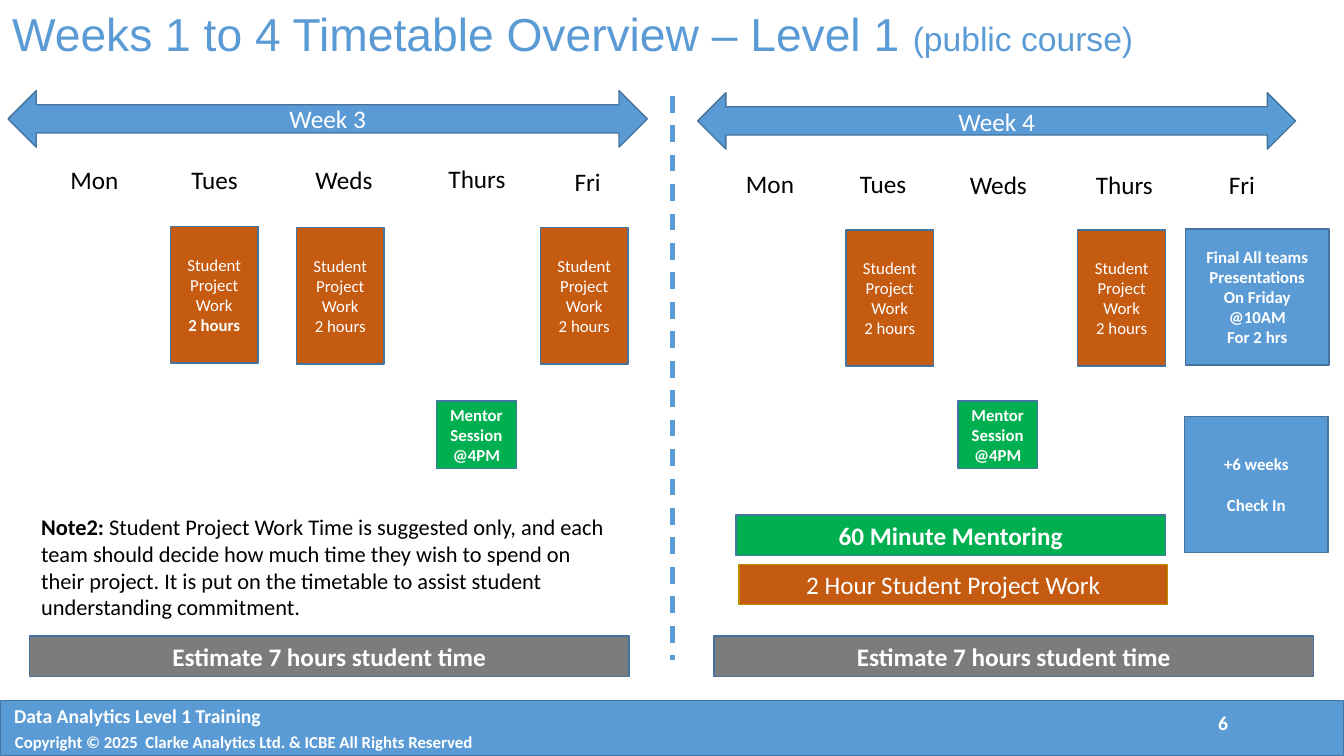
from dataclasses import dataclass

from lxml.etree import SubElement
from pptx import Presentation
from pptx.dml.color import RGBColor
from pptx.enum.dml import MSO_LINE
from pptx.enum.shapes import MSO_CONNECTOR, MSO_SHAPE
from pptx.enum.text import MSO_ANCHOR, MSO_AUTO_SIZE, PP_ALIGN
from pptx.oxml.ns import qn
from pptx.shapes.base import BaseShape
from pptx.slide import Slide
from pptx.text.text import Font, TextFrame
from pptx.util import Emu, Pt

SCALE = 9144
BLUE, EDGE, GOLD = "5B9BD5", "43739E", "BD8E00"
RUST, GREEN, GRAY = "C55A11", "00B050", "7C7C7C"
WHITE, BLACK = "FFFFFF", "000000"
DAYS = ("Mon", "Tues", "Weds", "Thurs", "Fri")
WIDTHS = (68, 67, 77, 77, 46)


@dataclass(frozen=True)
class Block:
    x: int
    y: int
    w: int
    h: int
    text: str = ""
    fill: str = BLUE
    size: int = 12
    bold: bool = False
    edge: str = EDGE
    form: MSO_SHAPE = MSO_SHAPE.RECTANGLE


@dataclass(frozen=True)
class Label:
    x: int
    y: int
    w: int
    h: int
    text: str
    size: int = 18
    color: str = BLACK
    bold: bool = False
    wrap: bool = False
    align: PP_ALIGN = PP_ALIGN.LEFT


def px(value: int) -> Emu:
    return Emu(value * SCALE)


def rgb(code: str) -> RGBColor:
    return RGBColor.from_string(code)


def style(font: Font, size: int, color: str, bold: bool = False, face: str = "Calibri") -> None:
    font.name, font.size, font.bold = face, Pt(size), bold
    font.color.rgb = rgb(color)


def write(frame: TextFrame, text: str, size: int, color: str, bold: bool, align: PP_ALIGN) -> None:
    frame.text = text
    for para in frame.paragraphs:
        para.alignment = align
        for run in para.runs:
            style(run.font, size, color, bold)


def add_block(slide: Slide, item: Block) -> BaseShape:
    shape = slide.shapes.add_shape(item.form, px(item.x), px(item.y), px(item.w), px(item.h))
    shape.shadow.inherit = False
    shape.fill.solid()
    shape.fill.fore_color.rgb = rgb(item.fill)
    shape.line.color.rgb = rgb(item.edge)
    shape.line.width = Pt(1)
    if item.text:
        frame = shape.text_frame
        frame.word_wrap = True
        frame.vertical_anchor = MSO_ANCHOR.MIDDLE
        write(frame, item.text, item.size, WHITE, item.bold, PP_ALIGN.CENTER)
    return shape


def add_label(slide: Slide, item: Label) -> BaseShape:
    box = slide.shapes.add_textbox(px(item.x), px(item.y), px(item.w), px(item.h))
    frame = box.text_frame
    frame.word_wrap = item.wrap
    frame.auto_size = MSO_AUTO_SIZE.SHAPE_TO_FIT_TEXT
    write(frame, item.text, item.size, item.color, item.bold, item.align)
    return box


def add_title(slide: Slide) -> None:
    title = slide.shapes.title
    title.left, title.top, title.width, title.height = px(12), px(2), px(1170), px(69)
    frame = title.text_frame
    frame.margin_left = frame.margin_right = frame.margin_top = frame.margin_bottom = 0
    frame.vertical_anchor = MSO_ANCHOR.MIDDLE
    frame.auto_size = MSO_AUTO_SIZE.NONE
    frame.word_wrap = True
    para = frame.paragraphs[0]
    para.text = "Weeks 1 to 4 Timetable Overview – Level 1 "
    para.alignment = PP_ALIGN.LEFT
    para.line_spacing = 0.9
    style(para.runs[0].font, 33, BLUE, face="Arial")
    tail = para.add_run()
    tail.text = "(public course)"
    style(tail.font, 24, BLUE, face="Arial")


def add_split(slide: Slide) -> None:
    line = slide.shapes.add_connector(MSO_CONNECTOR.STRAIGHT, px(667), px(95), px(667), px(655))
    line.line.color.rgb = rgb(BLUE)
    line.line.width = Pt(3)
    line.line.dash_style = MSO_LINE.DASH
    SubElement(line._element.spPr, qn("a:effectLst"))


def add_days(slide: Slide, spots: tuple[tuple[int, int], ...]) -> None:
    for day, width, (x, y) in zip(DAYS, WIDTHS, spots):
        add_label(slide, Label(x, y, width, 40, day))


def work(x: int, y: int) -> Block:
    return Block(x, y, 87, 135, "Student Project Work\n2 hours", RUST)


def mentor(x: int) -> Block:
    return Block(x, 398, 79, 67, "Mentor Session\n@4PM", GREEN, bold=True)


def total(x: int) -> Block:
    return Block(x, 631, 595, 40, "Estimate 7 hours student time", GRAY, 18, True)


def week(x: int, y: int, w: int, text: str) -> Block:
    return Block(x, y, w, 56, text, size=18, form=MSO_SHAPE.LEFT_RIGHT_ARROW)


def main() -> None:
    deck = Presentation()
    deck.slide_width, deck.slide_height = px(1333), px(750)
    slide = deck.slides.add_slide(deck.slide_layouts[5])
    add_title(slide)
    add_split(slide)
    add_days(slide, ((60, 158), (180, 158), (303, 158), (435, 157), (560, 160)))
    add_days(slide, ((730, 162), (843, 162), (952, 163), (1077, 163), (1209, 163)))

    blocks = (
        Block(0, 695, 1333, 55),
        week(8, 90, 634, "Week 3"),
        week(692, 92, 593, "Week 4"),
        total(29),
        total(708),
        work(294, 226),
        work(536, 226),
        work(839, 228),
        work(1069, 228),
        mentor(433),
        mentor(950),
        Block(1176, 227, 142, 135,
              "Final All teams Presentations\nOn Friday\n@10AM\nFor 2 hrs", bold=True),
        Block(730, 511, 426, 40, "60 Minute Mentoring", GREEN, 18, True),
        Block(733, 560, 425, 40, "2 Hour Student Project Work", RUST, 18, edge=GOLD),
    )
    for item in blocks:
        add_block(slide, item)

    first = add_block(slide, work(169, 225))
    first.text_frame.paragraphs[1].runs[0].font.bold = True
    check = add_block(slide, Block(1175, 413, 142, 135, "+6 weeks\nCheck In", bold=True))
    check.text_frame.paragraphs[1].space_before = Pt(14.6)

    note = add_label(slide, Label(31, 504, 593, 118, "Note2:", 16, bold=True, wrap=True))
    rest = note.text_frame.paragraphs[0].add_run()
    rest.text = (
        " Student Project Work Time is suggested only, and each team should decide "
        "how much time they wish to spend on their project. It is put on the "
        "timetable to assist student understanding commitment."
    )
    style(rest.font, 16, BLACK)

    mid = PP_ALIGN.CENTER
    footer = (
        Label(1198, 700, 30, 34, "6", 14, WHITE, True, align=mid),
        Label(3, 693, 267, 34, "Data Analytics Level 1 Training", 14, WHITE, True, align=mid),
        Label(5, 721, 580, 30,
              "Copyright © 2025  Clarke Analytics Ltd. & ICBE All Rights Reserved",
              12, WHITE, True, True),
    )
    for item in footer:
        add_label(slide, item)
    deck.save("out.pptx")


if __name__ == "__main__":
    main()
